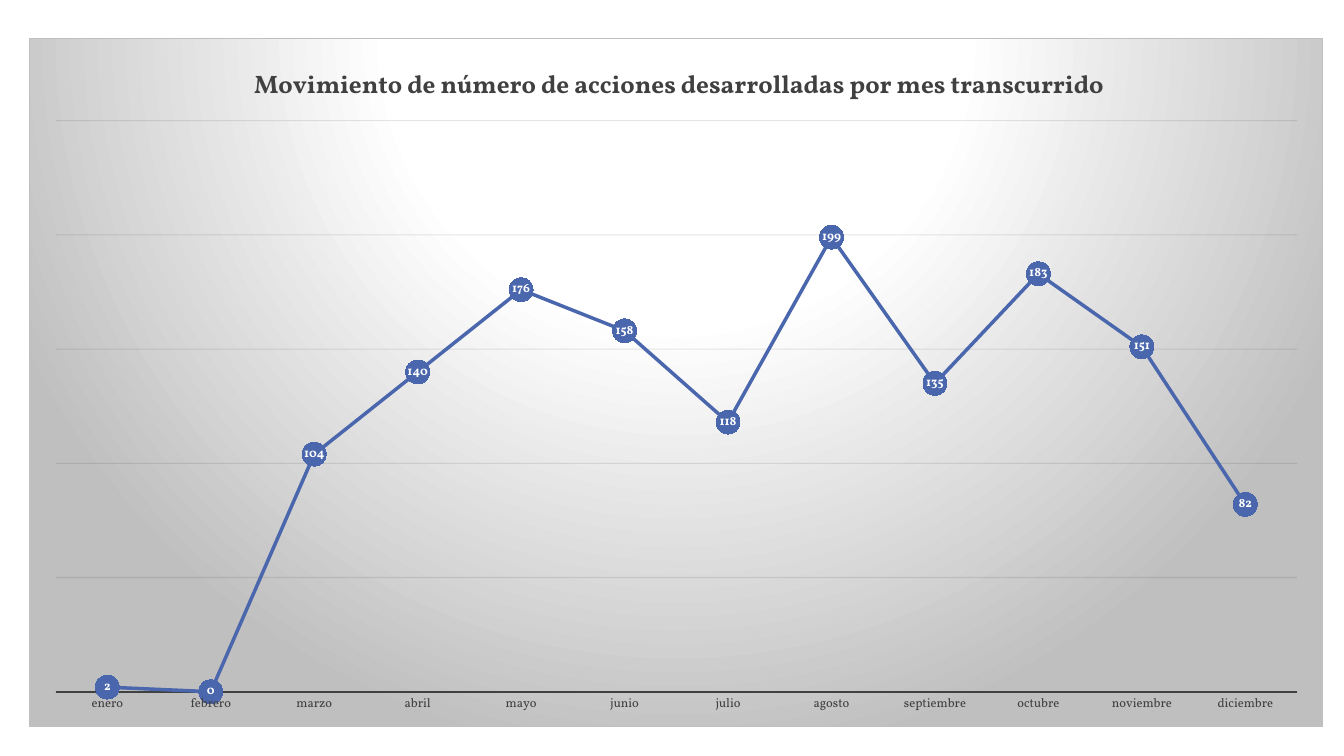
from lxml import etree
from pptx import Presentation
from pptx.chart.data import CategoryChartData
from pptx.dml.color import RGBColor
from pptx.enum.chart import (XL_CHART_TYPE as CT, XL_LABEL_POSITION as LP,
                             XL_MARKER_STYLE as MS, XL_TICK_MARK as TM)
from pptx.oxml import parse_xml
from pptx.oxml.ns import nsdecls, qn
from pptx.util import Pt

MONTHS = ["enero", "febrero", "marzo", "abril", "mayo", "junio", "julio",
          "agosto", "septiembre", "octubre", "noviembre", "diciembre"]
ACTIONS = [2, 0, 104, 140, 176, 158, 118, 199, 135, 183, 151, 82]


def rgb(color):
    return RGBColor.from_string(color)


class Deck:
    font, ink, accent, edge = "Vollkorn", "404040", "4A66AC", "BFBFBF"

    def __init__(self):
        self.prs = Presentation()
        self.prs.slide_width, self.prs.slide_height = Pt(960), Pt(540)
        self.s = self.prs.slides.add_slide(self.prs.slide_layouts[6])

    def style(self, font, size, color, bold=False):
        font.name, font.size, font.bold = self.font, Pt(size), bold
        font.color.rgb = rgb(color)

    def line(self, line, color, width):
        line.color.rgb, line.width = rgb(color), Pt(width)

    def layout(self, **edges):
        """Manual layout in fractions of the chart area."""
        target = "<c:layoutTarget val='inner'/>" if "w" in edges else ""
        modes = "".join(f"<c:{k}Mode val='edge'/>" for k in "xy")
        values = "".join(f"<c:{k} val='{v}'/>" for k, v in edges.items())
        return parse_xml(f"<c:layout {nsdecls('c')}><c:manualLayout>{target}{modes}"
                         f"{values}</c:manualLayout></c:layout>")

    def line_chart(self, x, y, w, h, cats, vals):
        data = CategoryChartData()
        data.categories = cats
        data.add_series("Series 1", vals)
        chart = self.s.shapes.add_chart(
            CT.LINE_MARKERS, Pt(x), Pt(y), Pt(w), Pt(h), data).chart
        self.style(chart.font, 10, "000000")
        chart.has_legend = False
        plot = chart.plots[0]
        plot.vary_by_categories = False

        # Series, markers and value labels
        ser = plot.series[0]
        ser.smooth = False
        self.line(ser.format.line, self.accent, 2.5)
        ser.marker.style, ser.marker.size = MS.CIRCLE, 17
        ser.marker.format.fill.solid()
        ser.marker.format.fill.fore_color.rgb = rgb(self.accent)
        self.line(ser.marker.format.line, self.accent, 0.75)
        labels = ser.data_labels
        labels.show_value, labels.position = True, LP.CENTER
        self.style(labels.font, 9, "FFFFFF", True)

        # Axes
        cat = chart.category_axis
        cat.major_tick_mark = cat.minor_tick_mark = TM.NONE
        self.style(cat.tick_labels.font, 9, self.ink)
        self.line(cat.format.line, self.ink, 1.5)
        val = chart.value_axis
        val.visible, val.has_major_gridlines = False, True
        val.minimum_scale, val.maximum_scale, val.major_unit = 0, 250, 50
        grid = val.major_gridlines.format.line
        self.line(grid, "0D0D0D", 0.75)
        color = val.major_gridlines._xAx.find(".//" + qn("c:majorGridlines")).find(
            ".//" + qn("a:srgbClr"))
        etree.SubElement(color, qn("a:alpha"), val="10000")

        # Plot position
        area = chart.element.find(".//" + qn("c:plotArea"))
        for old in area.findall(qn("c:layout")):
            area.remove(old)
        area.insert(0, self.layout(x=0.02, y=0.12, w=0.96, h=0.83))
        return chart

    def chart_title(self, chart, text, x, y):
        title = chart.chart_title
        p = title.text_frame.paragraphs[0]
        p.text = text
        self.style(p.font, 18, self.ink, True)
        node = chart.element.find(".//" + qn("c:title"))
        for old in node.findall(qn("c:layout")):
            node.remove(old)
        node.find(qn("c:tx")).addnext(self.layout(x=x, y=y))
        title.include_in_layout = False

    def chart_background(self, chart, stops):
        gs = "".join(f"<a:gs pos='{pos * 1000}'><a:srgbClr val='{color}'/></a:gs>"
                     for pos, color in stops)
        sp_pr = parse_xml(
            f"<c:spPr {nsdecls('c', 'a')}><a:gradFill><a:gsLst>{gs}</a:gsLst>"
            "<a:path path='circle'><a:fillToRect l='50000' t='-80000' r='50000' "
            "b='180000'/></a:path></a:gradFill>"
            f"<a:ln w='{Pt(0.75)}'><a:solidFill><a:srgbClr val='{self.edge}'/>"
            "</a:solidFill></a:ln></c:spPr>")
        chart.element.find(qn("c:chart")).addnext(sp_pr)


def main():
    deck = Deck()
    chart = deck.line_chart(20.9, 26.9, 924.5, 492.2, MONTHS, ACTIONS)
    deck.chart_title(
        chart, "Movimiento de número de acciones desarrolladas por mes transcurrido",
        0.17, 0.035)
    deck.chart_background(chart, [(0, "FFFFFF"), (39, "FFFFFF"), (100, deck.edge)])
    deck.prs.save("out.pptx")


if __name__ == "__main__":
    main()
